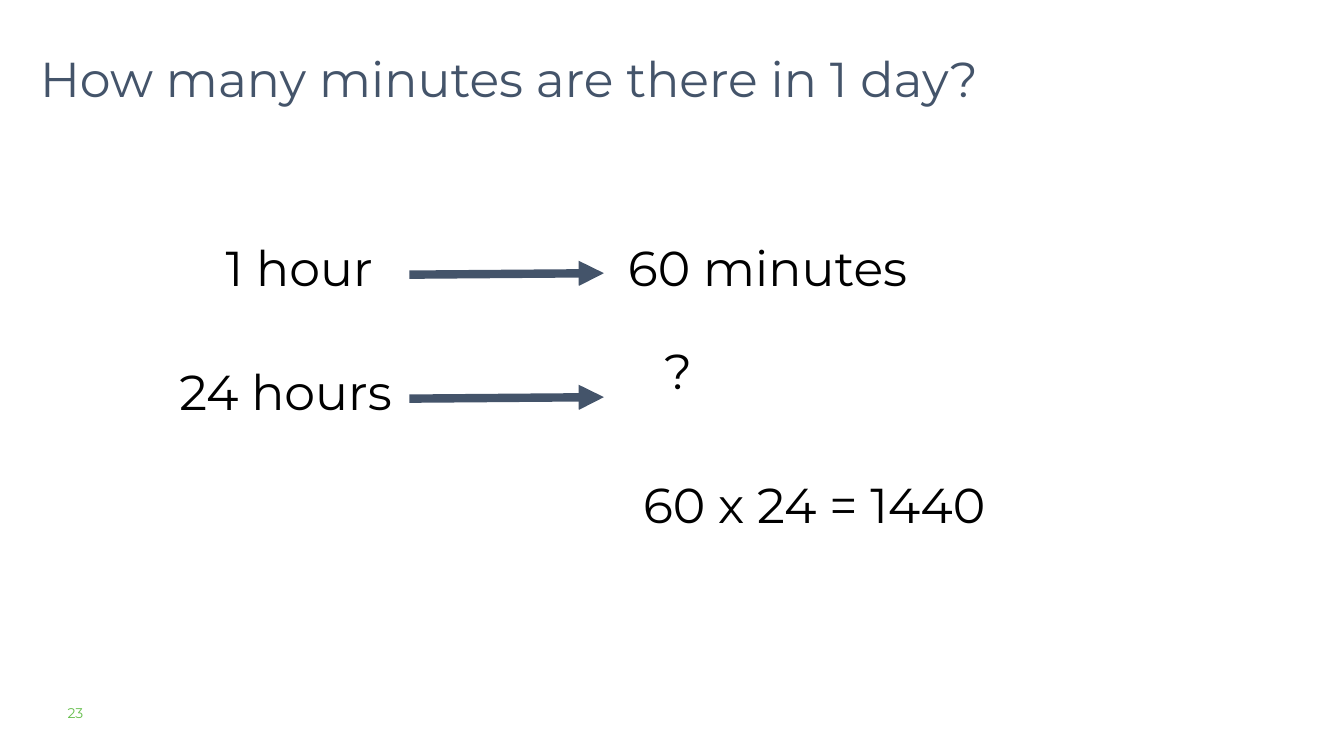
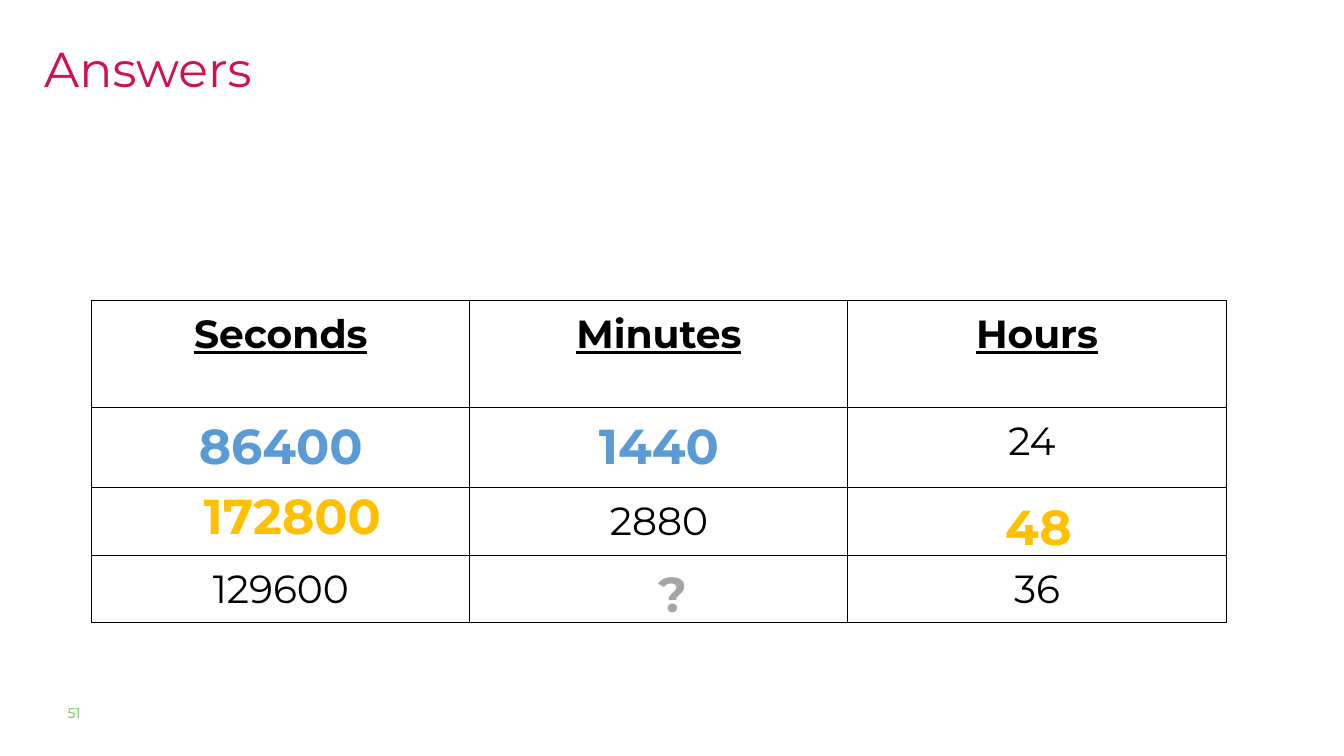
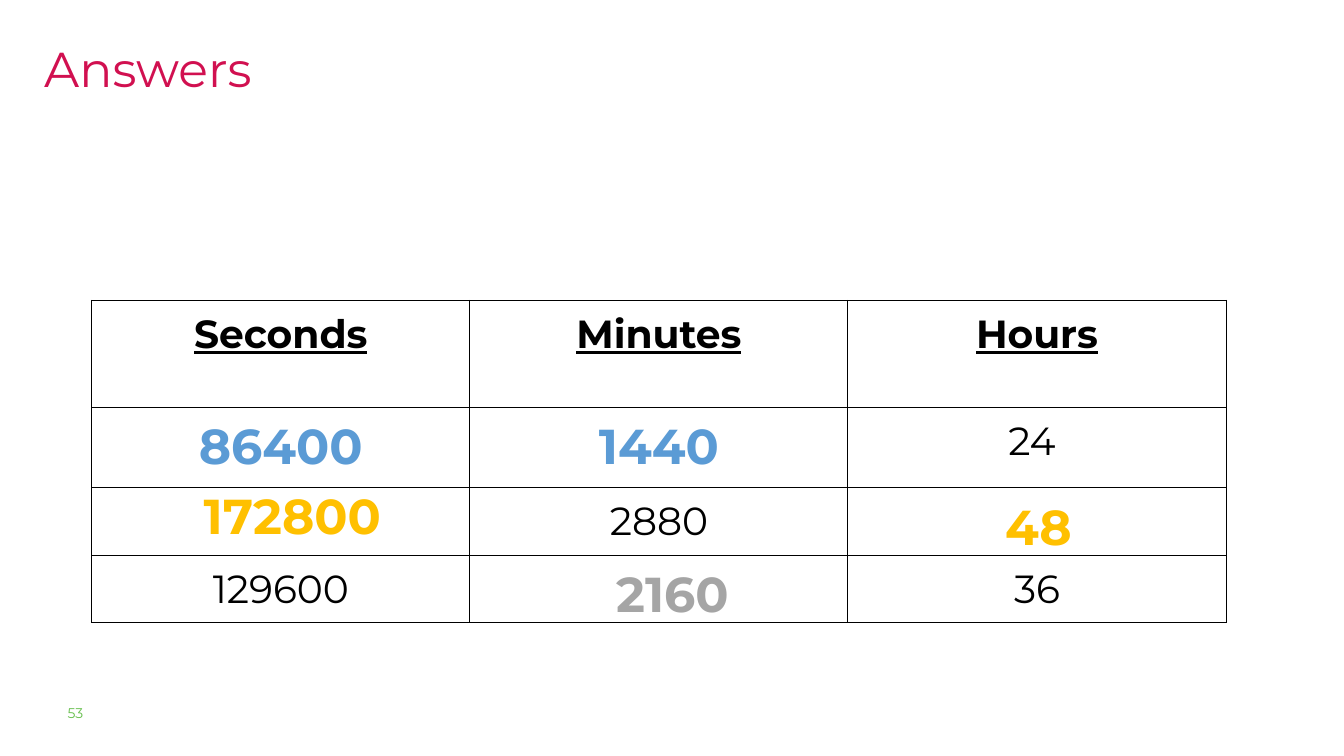
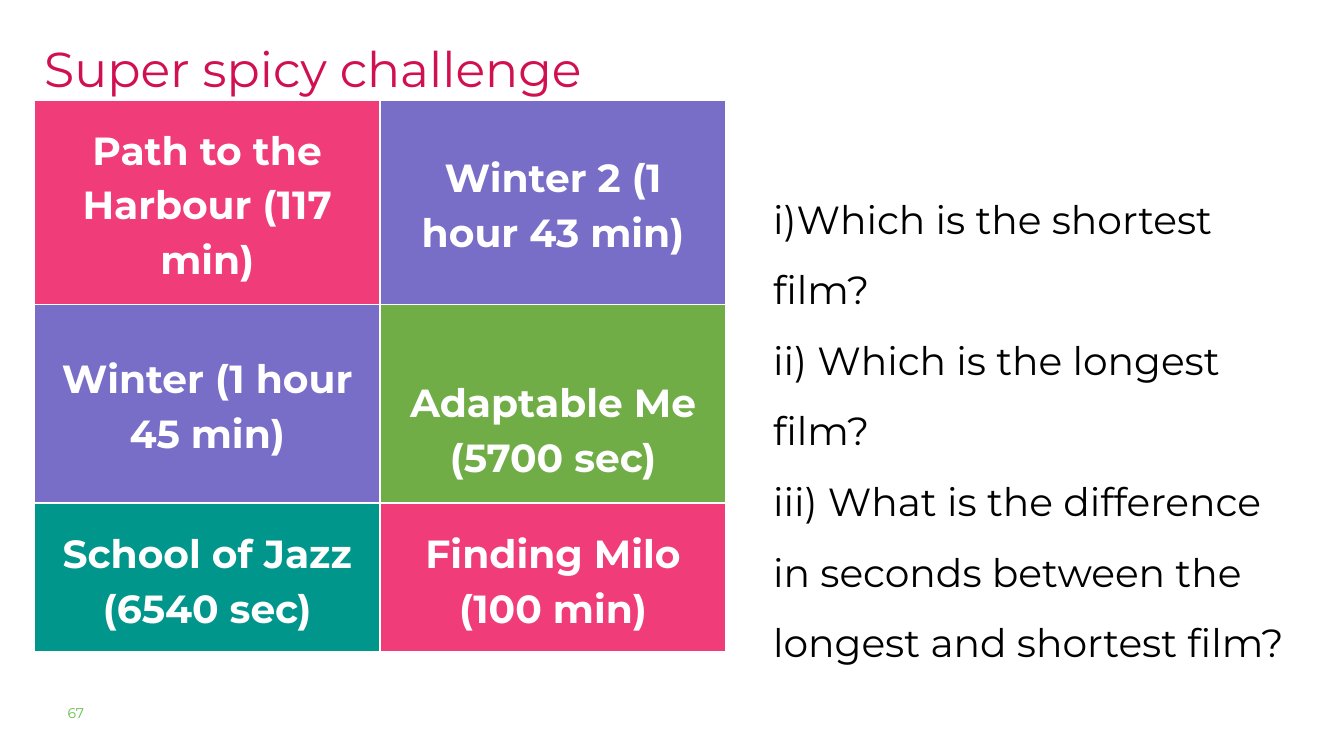
from typing import NamedTuple

from lxml.etree import SubElement
from pptx import Presentation
from pptx.dml.color import RGBColor
from pptx.enum.shapes import MSO_CONNECTOR as Conn
from pptx.enum.text import MSO_ANCHOR as Anchor, PP_ALIGN as Align
from pptx.oxml import parse_xml
from pptx.oxml.ns import nsdecls, qn
from pptx.util import Pt

# Shared style: 100 px to the inch
SCALE = 9144
FONT = "Montserrat"
BLACK, WHITE, SLATE, ROSE = "000000", "FFFFFF", "44546A", "D11050"
GREEN, BLUE, GOLD, GREY = "65BE4B", "5B9BD5", "FFC000", "A5A5A5"
PINK, VIOLET, LEAF, TEAL = "F03C78", "786EC8", "70AD47", "00968C"
BIG, MID, SMALL = 35, 28, 10


class Box(NamedTuple):
    left: int
    top: int
    width: int
    height: int


class Cell(NamedTuple):
    text: str = ""
    size: int = MID
    color: str = BLACK
    bold: bool = False
    under: bool = False
    fill: str = ""
    drop: int = 0  # extra top margin


class Grid(NamedTuple):
    left: int
    top: int
    cols: list[int]
    rows: list[int]
    edge: str
    weight: float
    pad: int
    anchor: Anchor
    space: float


class Step(NamedTuple):
    text: str
    box: Box
    tip: int  # height at which the arrow ends


def px(n: int) -> int:
    return n * SCALE


def rgb(code: str) -> RGBColor:
    return RGBColor.from_string(code)


def write(frame, text: str, *, size: int = BIG, color: str = BLACK,
          bold: bool = False, under: bool = False, align: Align = Align.LEFT,
          space: float = 1.0) -> None:
    """Fill a text frame, one paragraph a line."""
    for i, line in enumerate(text.split("\n")):
        para = frame.paragraphs[0] if i == 0 else frame.add_paragraph()
        para.alignment, para.line_spacing = align, space
        run = para.add_run()
        run.text = line
        font = run.font
        font.name, font.size = FONT, Pt(size)
        font.bold, font.underline = bold, under
        font.color.rgb = rgb(color)


def label(slide, text: str, box: Box, *, pad: tuple[int, int] = (10, 10), **style):
    shape = slide.shapes.add_textbox(*map(px, box))
    frame = shape.text_frame
    frame.word_wrap = True
    frame.margin_left = frame.margin_right = px(pad[0])
    frame.margin_top = frame.margin_bottom = px(pad[1])
    write(frame, text, **style)
    return shape


def page(deck, num: int, title: str, box: Box, color: str = ROSE):
    """Add a blank slide with its number and title."""
    slide = deck.slides.add_slide(deck.slide_layouts[6])
    label(slide, str(num), Box(67, 699, 105, 26), pad=(0, 0), size=SMALL, color=GREEN)
    label(slide, title, box, pad=(10, 5), color=color, space=1.3)
    return slide


def arrow(slide, start, end: tuple[int, int]) -> None:
    """Draw an arrow from the right side of a box."""
    line = slide.shapes.add_connector(Conn.STRAIGHT, 0, 0, *map(px, end))
    line.begin_connect(start, 3)
    line.line.color.rgb = rgb(SLATE)
    line.line.width = Pt(6)
    SubElement(line.line._get_or_add_ln(), qn("a:tailEnd"), type="triangle")
    SubElement(line._element.spPr, qn("a:effectLst"))


def border(cell, color: str, weight: float) -> None:
    props = cell._tc.get_or_add_tcPr()
    for i, side in enumerate("LRTB"):
        props.insert(i, parse_xml(
            f'<a:ln{side} {nsdecls("a")} w="{Pt(weight)}"><a:solidFill>'
            f'<a:srgbClr val="{color}"/></a:solidFill></a:ln{side}>'))


def table(slide, grid: Grid, cells: list[list[Cell]]) -> None:
    area = Box(grid.left, grid.top, sum(grid.cols), sum(grid.rows))
    tab = slide.shapes.add_table(len(cells), len(grid.cols), *map(px, area)).table
    tab.first_row = tab.horz_banding = False
    for col, width in zip(tab.columns, grid.cols):
        col.width = px(width)
    for r, row in enumerate(cells):
        tab.rows[r].height = px(grid.rows[r])
        for c, item in enumerate(row):
            cell = tab.cell(r, c)
            cell.vertical_anchor = grid.anchor
            cell.margin_left = cell.margin_right = cell.margin_bottom = px(grid.pad)
            cell.margin_top = px(grid.pad + item.drop)
            if item.fill:
                cell.fill.solid()
                cell.fill.fore_color.rgb = rgb(item.fill)
            else:
                cell.fill.background()
            border(cell, grid.edge, grid.weight)
            if item.text:
                write(cell.text_frame, item.text, size=item.size, color=item.color,
                      bold=item.bold, under=item.under, align=Align.CENTER,
                      space=grid.space)


def day(deck) -> None:
    """Minutes in a day."""
    slide = page(deck, 23, "How many minutes are there in 1 day?",
                 Box(30, 26, 964, 84), SLATE)
    for step in (Step("1 hour", Box(214, 226, 192, 93), 271),
                 Step("24 hours", Box(168, 349, 238, 93), 394)):
        arrow(slide, label(slide, step.text, step.box), (599, step.tip))
    label(slide, "60 minutes", Box(613, 226, 544, 93))
    label(slide, "?", Box(649, 328, 239, 93))
    label(slide, "60 x 24 = 1440", Box(628, 461, 506, 84))


def answers(deck, num: int, last: str) -> None:
    """Table of times, with the last answer given or open."""
    slide = page(deck, num, "Answers", Box(34, 16, 489, 84))
    heads = [Cell(t, bold=True, under=True) for t in ("Seconds", "Minutes", "Hours")]
    found = [Cell(t, BIG, BLUE, True) for t in ("86400", "1440")]
    grid = Grid(91, 298, [375] * 3, [106, 80, 67, 67], BLACK, 0.75, 10,
                Anchor.TOP, 1.0)
    table(slide, grid, [
        heads,
        [*found, Cell("24 ")],
        [Cell(), Cell("2880"), Cell()],
        [Cell("129600"), Cell(), Cell("36")],
    ])
    for text, box, color in (("48", Box(866, 483, 328, 67), GOLD),
                             ("172800", Box(126, 472, 328, 67), GOLD),
                             (last, Box(581, 549, 172, 67), GREY)):
        label(slide, text, box, color=color, bold=True, align=Align.CENTER)


def films(deck) -> None:
    """Film lengths and questions."""
    slide = page(deck, 67, "Super spicy challenge", Box(34, 16, 665, 84))

    def film(text: str, fill: str, drop: int = 0) -> Cell:
        return Cell(text, color=WHITE, bold=True, fill=fill, drop=drop)

    grid = Grid(34, 99, [343, 343], [203, 197, 148], WHITE, 1.5, 20,
                Anchor.MIDDLE, 1.15)
    table(slide, grid, [
        [film("Path to the Harbour (117 min)", PINK),
         film("Winter 2 (1 hour 43 min)", VIOLET)],
        [film("Winter (1 hour 45 min)", VIOLET),
         film("Adaptable Me (5700 sec)", LEAF, 47)],
        [film("School of Jazz (6540 sec)", TEAL),
         film("Finding Milo (100 min)", PINK)],
    ])
    label(slide, "i)Which is the shortest film?\n"
                 "ii) Which is the longest film?\n"
                 "iii) What is the difference in seconds between the longest "
                 "and shortest film?",
          Box(757, 160, 544, 465), size=MID, space=1.5)


def main() -> None:
    deck = Presentation()
    deck.slide_width, deck.slide_height = px(1333), px(750)
    day(deck)
    answers(deck, 51, "?")
    answers(deck, 53, "2160")
    films(deck)
    deck.save("out.pptx")


if __name__ == "__main__":
    main()
